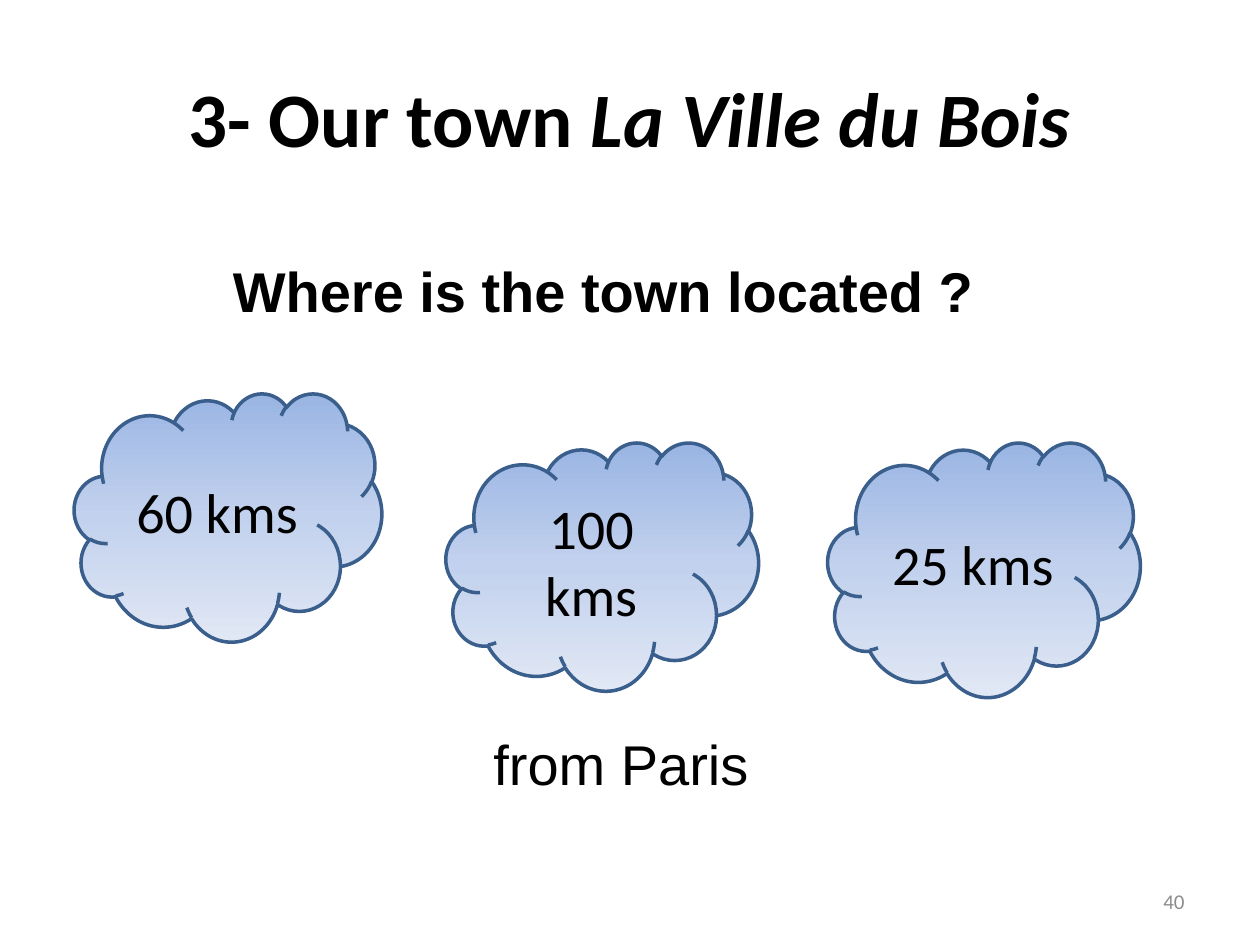
from copy import deepcopy
from dataclasses import dataclass

from pptx import Presentation
from pptx.dml.color import RGBColor
from pptx.enum.shapes import MSO_SHAPE
from pptx.enum.text import MSO_ANCHOR, PP_ALIGN
from pptx.util import Inches, Pt

CLOUD = MSO_SHAPE.CLOUD
MIDDLE = MSO_ANCHOR.MIDDLE
CENTER = PP_ALIGN.CENTER
RIGHT = PP_ALIGN.RIGHT


@dataclass(frozen=True)
class Theme:
    heading_font: str = "Calibri"
    body_font: str = "Arial"
    title_size: int = 44
    body_size: int = 32
    number_size: int = 12
    ink: str = "000000"
    muted: str = "8C8C8C"
    outline: str = "3A5F8C"
    outline_width: int = 2
    cloud_stops: tuple = ((0, "9AB5E4"), (0.5, "C2D1ED"), (1, "E1E8F5"))


class SlideBuilder:
    def __init__(self, slide, theme):
        self.slide = slide
        self.theme = theme

    def format_span(self, span, font, size, color, bold=False):
        span.font.name = font
        span.font.size = Pt(size)
        span.font.bold = bold
        span.font.color.rgb = RGBColor.from_string(color)

    def set_text(self, box, text, font, size, color, bold=False, align=CENTER):
        frame = box.text_frame
        frame.word_wrap = True
        frame.vertical_anchor = MIDDLE
        frame.text = text
        para = frame.paragraphs[0]
        para.alignment = align
        self.format_span(para.runs[0], font, size, color, bold)

    def title(self, place, text, emphasis):
        theme = self.theme
        box = self.slide.shapes.title
        box.left, box.top, box.width, box.height = map(Inches, place)
        style = (theme.heading_font, theme.title_size, theme.ink, True)
        self.set_text(box, text, *style)
        span = box.text_frame.paragraphs[0].add_run()
        span.text = emphasis
        self.format_span(span, *style)
        span.font.italic = True

    def label(self, place, text, *style, **options):
        box = self.slide.shapes.add_textbox(*map(Inches, place))
        self.set_text(box, text, *style, **options)

    def cloud(self, place, text):
        theme = self.theme
        shape = self.slide.shapes.add_shape(CLOUD, *map(Inches, place))
        shape.shadow.inherit = False
        shape.line.color.rgb = RGBColor.from_string(theme.outline)
        shape.line.width = Pt(theme.outline_width)
        shape.fill.gradient()
        shape.fill.gradient_angle = 270
        stop_list = shape.element.xpath(".//a:gsLst")[0]
        stop_list.append(deepcopy(stop_list[-1]))
        for stop, (position, color) in zip(shape.fill.gradient_stops, theme.cloud_stops):
            stop.position = position
            stop.color.rgb = RGBColor.from_string(color)
        self.set_text(shape, text, theme.heading_font, theme.body_size, theme.ink)


def main():
    deck = Presentation()
    deck.slide_width = Inches(10)
    deck.slide_height = Inches(7.5)
    theme = Theme()
    page = SlideBuilder(deck.slides.add_slide(deck.slide_layouts[5]), theme)

    page.title((0.5, 0.3, 9, 1.25), "3- Our town ", "La Ville du Bois")
    body = (theme.body_font, theme.body_size, theme.ink)
    page.label((0.35, 2, 8.88, 0.61), "Where is the town located ?", *body, bold=True)
    page.label((0.35, 5.75, 9.16, 0.61), "from Paris", *body)

    clouds = (
        ((0.59, 3.12, 2.44, 1.97), "60 kms"),
        ((3.54, 3.51, 2.48, 1.97), "100 kms"),
        ((6.57, 3.51, 2.48, 2.02), "25 kms"),
    )
    for place, distance in clouds:
        page.cloud(place, distance)

    page.label((7.17, 6.95, 2.33, 0.4), "40", theme.heading_font,
               theme.number_size, theme.muted, align=RIGHT)
    deck.save("out.pptx")


if __name__ == "__main__":
    main()
